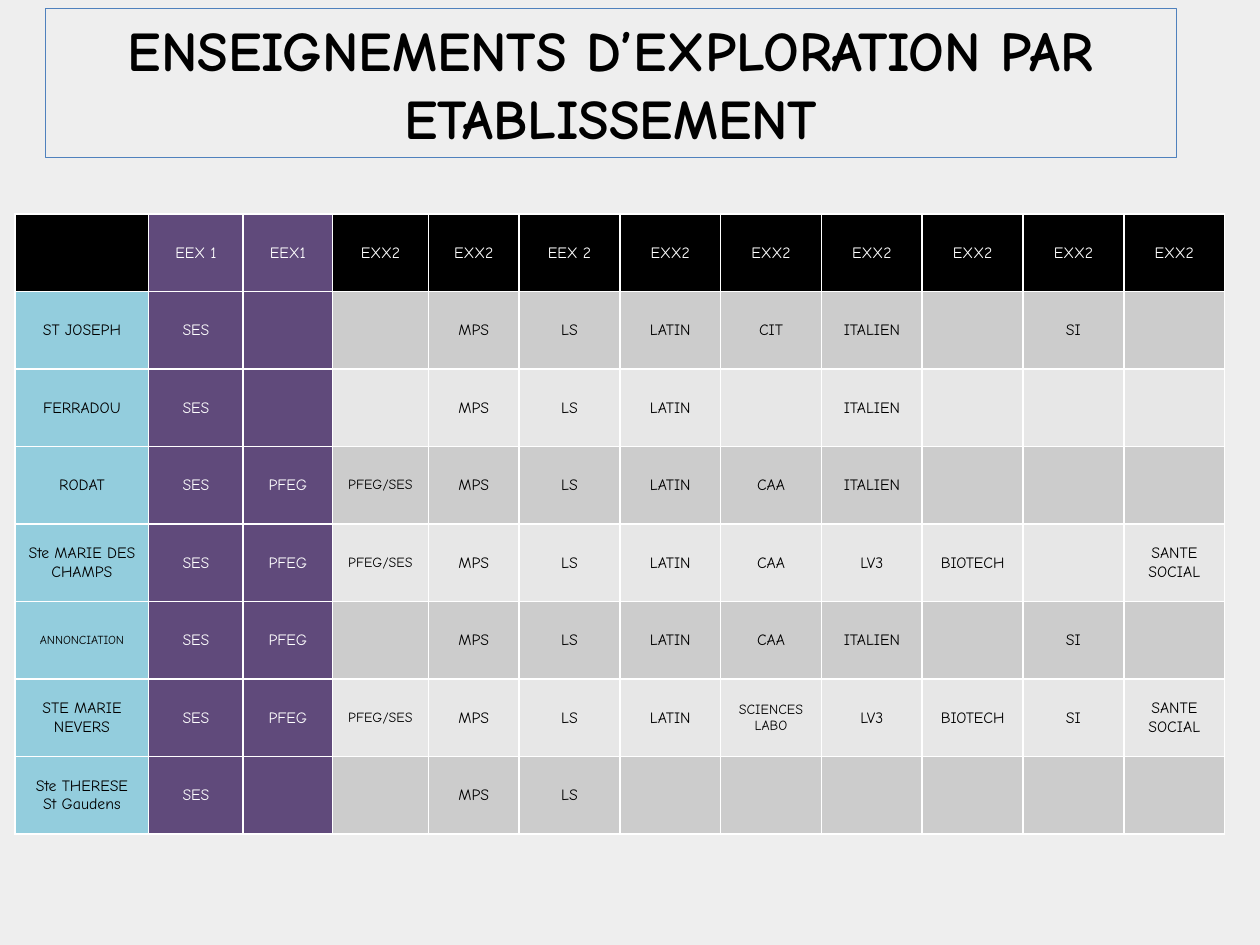
from dataclasses import dataclass

from lxml import etree
from pptx import Presentation
from pptx import util as u
from pptx.dml.color import RGBColor
from pptx.enum import text
from pptx.oxml.ns import qn


@dataclass(frozen=True)
class Theme:
    font: str = "Comic Neue"
    page: str = "EEEEEE"
    ink: str = "000000"
    light: str = "FFFFFF"
    frame: str = "4F81BD"
    school: str = "93CDDD"
    first_choice: str = "604A7B"
    bands: tuple = ("CCCCCC", "E7E7E7")
    title_size: float = 32
    cell_size: float = 9
    small_size: float = 8
    tiny_size: float = 7
    frame_width: float = 0.75
    border_width: float = 1


THEME = Theme()
TITLE = "ENSEIGNEMENTS D’EXPLORATION PAR ETABLISSEMENT"
COLUMN_WIDTHS = [1.06, 0.75, 0.71, 0.76, 0.72] + [0.8] * 7
FIRST_CHOICE_COLUMNS = (1, 2)
HEADER = ["", "EEX 1", "EEX1", "EXX2", "EXX2", "EEX 2"] + ["EXX2"] * 6
SCHOOLS = [
    ["ST JOSEPH", "SES", "", "", "MPS", "LS", "LATIN", "CIT", "ITALIEN", "", "SI", ""],
    ["FERRADOU", "SES", "", "", "MPS", "LS", "LATIN", "", "ITALIEN", "", "", ""],
    ["RODAT", "SES", "PFEG", "PFEG/SES", "MPS", "LS", "LATIN", "CAA", "ITALIEN", "", "", ""],
    ["Ste MARIE DES CHAMPS", "SES", "PFEG", "PFEG/SES", "MPS", "LS", "LATIN", "CAA",
     "LV3", "BIOTECH", "", "SANTE SOCIAL"],
    ["ANNONCIATION", "SES", "PFEG", "", "MPS", "LS", "LATIN", "CAA", "ITALIEN", "", "SI", ""],
    ["STE MARIE NEVERS", "SES", "PFEG", "PFEG/SES", "MPS", "LS", "LATIN", "SCIENCES\nLABO",
     "LV3", "BIOTECH", "SI", "SANTE SOCIAL"],
    ["Ste THERESE\nSt Gaudens", "SES", "", "", "MPS", "LS", "", "", "", "", "", ""],
]
SPECIAL_SIZES = {
    "PFEG/SES": THEME.small_size,
    "SCIENCES\nLABO": THEME.small_size,
    "ANNONCIATION": THEME.tiny_size,
}


def rgb(value):
    return RGBColor.from_string(value)


def format_text(frame, size, color, bold=False):
    for para in frame.paragraphs:
        para.alignment = text.PP_ALIGN.CENTER
        for span in para.runs:
            span.font.name = THEME.font
            span.font.size = u.Pt(size)
            span.font.bold = bold
            span.font.color.rgb = rgb(color)


def set_borders(cell):
    properties = cell._tc.get_or_add_tcPr()
    for position, side in enumerate(("lnL", "lnR", "lnT", "lnB")):
        line = etree.Element(qn(f"a:{side}"), w=str(u.Pt(THEME.border_width)))
        fill = etree.SubElement(line, qn("a:solidFill"))
        etree.SubElement(fill, qn("a:srgbClr"), val=THEME.light)
        properties.insert(position, line)


def cell_colors(row, column):
    if column in FIRST_CHOICE_COLUMNS:
        return THEME.first_choice, THEME.light
    if row == 0:
        return THEME.ink, THEME.light
    if column == 0:
        return THEME.school, THEME.ink
    return THEME.bands[(row - 1) % 2], THEME.ink


def place_title(page, box):
    title = page.shapes.title
    title.left, title.top, title.width, title.height = box
    title.line.color.rgb = rgb(THEME.frame)
    title.line.width = u.Pt(THEME.frame_width)
    frame = title.text_frame
    frame.text = TITLE
    frame.word_wrap = True
    frame.auto_size = text.MSO_AUTO_SIZE.NONE
    frame.vertical_anchor = text.MSO_ANCHOR.MIDDLE
    format_text(frame, THEME.title_size, THEME.ink, bold=True)


def place_table(page, box):
    rows = [HEADER] + SCHOOLS
    left, top, width, height = box
    table = page.shapes.add_table(len(rows), len(HEADER), left, top, width, height).table
    table.horz_banding = False
    for column, share in zip(table.columns, COLUMN_WIDTHS):
        column.width = int(width * share / sum(COLUMN_WIDTHS))
    for r, values in enumerate(rows):
        table.rows[r].height = height // len(rows)
        for c, value in enumerate(values):
            cell = table.cell(r, c)
            fill, color = cell_colors(r, c)
            cell.fill.solid()
            cell.fill.fore_color.rgb = rgb(fill)
            set_borders(cell)
            cell.vertical_anchor = text.MSO_ANCHOR.MIDDLE
            if value:
                cell.text_frame.text = value
                format_text(cell.text_frame, SPECIAL_SIZES.get(value, THEME.cell_size), color)


def main():
    deck = Presentation()
    deck.slide_width, deck.slide_height = u.Inches(10), u.Inches(7.5)
    page = deck.slides.add_slide(deck.slide_layouts.get_by_name("Title Only"))
    page.background.fill.solid()
    page.background.fill.fore_color.rgb = rgb(THEME.page)
    place_title(page, [u.Inches(n) for n in (0.36, 0.07, 8.98, 1.18)])
    place_table(page, [u.Inches(n) for n in (0.12, 1.7, 9.6, 4.92)])
    deck.save("out.pptx")


if __name__ == "__main__":
    main()
